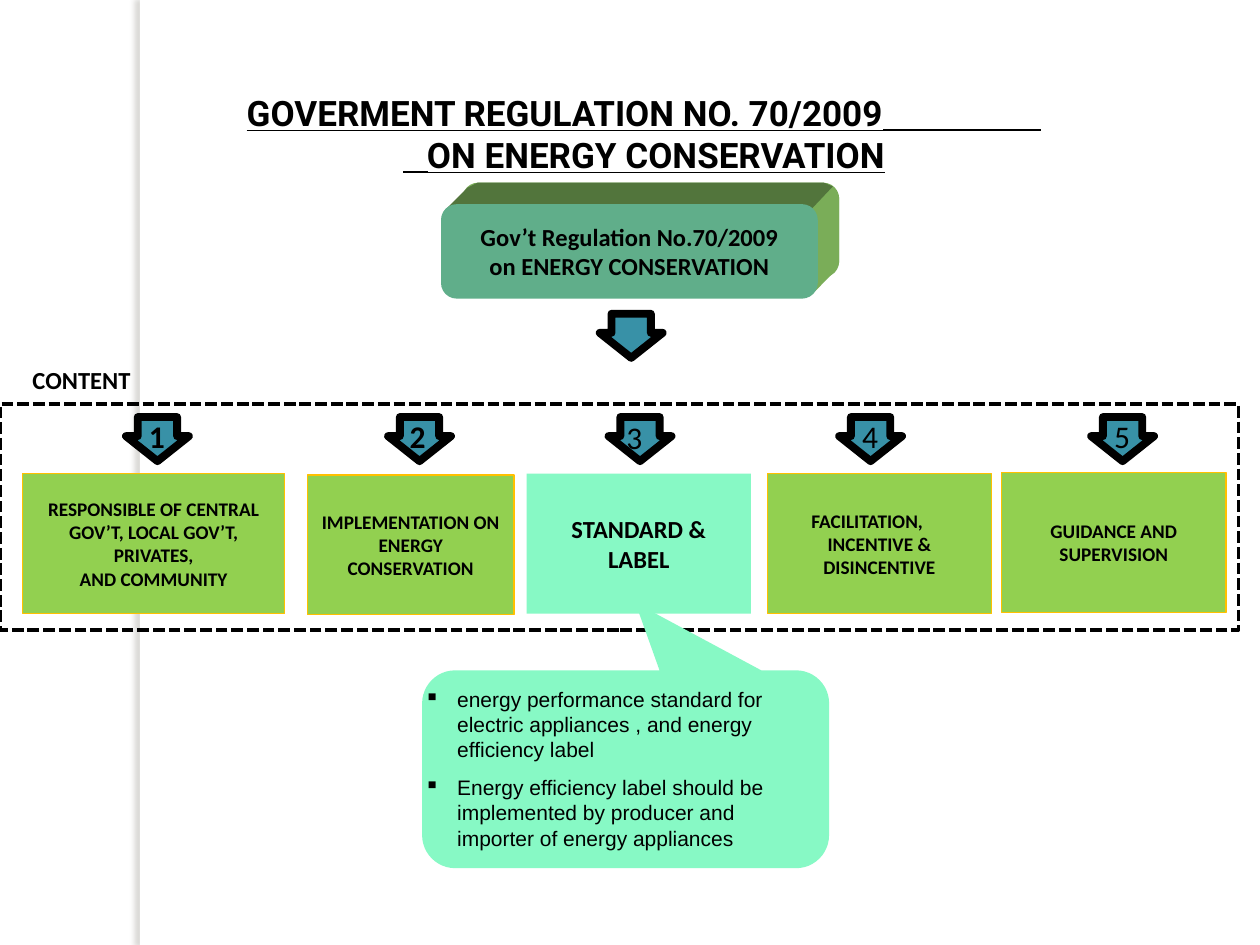
"""Build the slide on the government regulation for energy conservation."""
from lxml import etree
from pptx import Presentation
from pptx.dml.color import RGBColor
from pptx.enum.dml import MSO_LINE
from pptx.enum.shapes import MSO_CONNECTOR, MSO_SHAPE
from pptx.enum.text import MSO_ANCHOR, PP_ALIGN
from pptx.oxml import parse_xml
from pptx.oxml.ns import nsdecls, qn
from pptx.util import Inches, Pt

RECT, ARROW = MSO_SHAPE.RECTANGLE, MSO_SHAPE.DOWN_ARROW
ROUNDED = MSO_SHAPE.FLOWCHART_ALTERNATE_PROCESS
CALLOUT = MSO_SHAPE.ROUNDED_RECTANGULAR_CALLOUT
STRAIGHT = MSO_CONNECTOR.STRAIGHT
TOP, MIDDLE = MSO_ANCHOR.TOP, MSO_ANCHOR.MIDDLE
LEFT, CENTER = PP_ALIGN.LEFT, PP_ALIGN.CENTER
DOTTED = MSO_LINE.SQUARE_DOT
COLORS = {"white": "FFFFFF", "black": "000000", "teal": "3891A7", "green": "92D050",
          "amber": "FFC000", "mint": "87F9C5", "front": "60AE8A",
          "side": "7AAD58", "top": "52753C", "shade": "736F63"}

prs = Presentation()
prs.slide_width, prs.slide_height = Inches(10), Inches(7.5)
COL, ROW = prs.slide_width / 100, prs.slide_height / 75
slide = prs.slides.add_slide(prs.slide_layouts[6])


def paint(shape, fill=None, line=None, weight=0.75):
    shape.shadow.inherit = False
    if fill:
        shape.fill.solid()
        shape.fill.fore_color.rgb = RGBColor.from_string(COLORS[fill])
    else:
        shape.fill.background()
    if line:
        shape.line.color.rgb = RGBColor.from_string(COLORS[line])
        shape.line.width = Pt(weight)
    else:
        shape.line.fill.background()
    return shape


def write(shape, lines, size, bold=True, font="Calibri", inset=0.07,
          anchor=MIDDLE, wrap=True, align=CENTER, underline=None):
    frame = shape.text_frame
    margins = dict.fromkeys(("margin_left", "margin_right"), Inches(inset))
    layout = {"word_wrap": wrap, "vertical_anchor": anchor, **margins}
    for key, value in layout.items():
        setattr(frame, key, value)
    for number, (text, indent) in enumerate(lines):
        paragraph = frame.paragraphs[0] if number == 0 else frame.add_paragraph()
        paragraph.alignment = LEFT if indent else align
        if indent:
            paragraph._p.get_or_add_pPr().set("marL", str(Inches(indent)))
        run = paragraph.add_run()
        run.text = text
        look = {"size": Pt(size), "bold": bold, "name": font, "underline": underline}
        for key, value in look.items():
            setattr(run.font, key, value)
        run.font.color.rgb = RGBColor.from_string(COLORS["black"])
    return frame


def_place = [(11.1, 0, 0.8, 75)]
for left, top, width, height in def_place:
    margin_strip = paint(slide.shapes.add_shape(
        RECT, int(left * COL), int(top * ROW), int(width * COL), int(height * ROW)), "white")
effects = margin_strip._element.spPr.find(qn("a:effectLst"))
effects.append(parse_xml(
    f'<a:outerShdw {nsdecls("a")} blurRad="{Pt(3)}" dist="{Pt(3)}" dir="10800000">'
    f'<a:srgbClr val="{COLORS["shade"]}"><a:alpha val="25000"/></a:srgbClr></a:outerShdw>'))

for left, top in [(10, 33.1), (30.8, 33.1), (48.3, 33.1), (66.6, 33.1), (86.6, 33.1), (47.6, 24.9)]:
    arrow = paint(slide.shapes.add_shape(
        ARROW, int(left * COL), int(top * ROW), int(5 * COL), int(3.5 * ROW)),
        "teal", "black", 4.5)
    arrow.adjustments[0], arrow.adjustments[1] = 0.625, 0.566

content_frame = paint(slide.shapes.add_shape(
    RECT, 0, int(32.1 * ROW), int(98.3 * COL), int(17.9 * ROW)), None, "black", 2.25)
content_frame.line.dash_style = DOTTED

topics = [
    (1.8, 37.6, 20.8, "green", "amber", 11,
     [("RESPONSIBLE OF CENTRAL GOV’T, LOCAL GOV’T, PRIVATES,", 0), ("AND COMMUNITY", 0)]),
    (24.4, 37.7, 16.4, "green", "amber", 11, [("IMPLEMENTATION ON ENERGY CONSERVATION", 0)]),
    (41.8, 37.6, 17.8, "mint", None, 14, [("STANDARD &", 0), ("LABEL", 0)]),
    (60.9, 37.6, 17.8, "green", "amber", 11,
     [("FACILITATION,", 0.28), ("INCENTIVE &", 0), ("DISINCENTIVE", 0)]),
    (79.5, 37.5, 17.8, "green", "amber", 11, [("GUIDANCE AND SUPERVISION", 0)]),
]
for left, top, width, fill, line, size, lines in topics:
    topic = paint(slide.shapes.add_shape(
        RECT, int(left * COL), int(top * ROW), int(width * COL), int(11.1 * ROW)), fill, line)
    write(topic, lines, size)

for number, (left, top) in enumerate(
        [(10.8, 32.6), (31.5, 32.6), (48.7, 32.7), (67.4, 32.6), (87.4, 32.6)], 1):
    numeral = slide.shapes.add_textbox(
        int(left * COL), int(top * ROW), int(3.3 * COL), int(4 * ROW))
    write(numeral, [(str(number), 0)], 18, number < 3, inset=0.1, anchor=TOP, wrap=False)

content_label = slide.shapes.add_textbox(
    int(1.6 * COL), int(28.5 * ROW), int(13.3 * COL), int(3.3 * ROW))
write(content_label, [("CONTENT", 0)], 14, inset=0.1, anchor=TOP, align=LEFT)

callout = paint(slide.shapes.add_shape(
    CALLOUT, int(33.5 * COL), int(53.2 * ROW), int(32.3 * COL), int(15.7 * ROW)), "mint")
callout.rotation = 180
for index, value in enumerate((-0.024, 0.842, 0.167)):
    callout.adjustments[index] = value

label_rules = slide.shapes.add_textbox(
    int(32.7 * COL), int(54 * ROW), int(31.5 * COL), int(14.3 * ROW))
rules = write(label_rules, [
    ("energy performance standard for electric appliances , and energy efficiency label", 0.26),
    ("Energy efficiency label should be implemented by producer and importer of energy appliances",
     0.26)], 12, False, "Arial", 0.1, TOP)
for rule in rules.paragraphs:
    rule.space_after = Pt(7.2)
    properties = rule._p.get_or_add_pPr()
    properties.set("indent", str(Inches(-0.26)))
    etree.SubElement(properties, qn("a:buChar")).set("char", "▪")

paint(slide.shapes.add_shape(
    ROUNDED, int(36.7 * COL), int(14.5 * ROW), int(29.9 * COL), int(7.5 * ROW)), "side")
facets = [
    ("side", [(64.5, 16.6), (66.2, 14.9), (66.6, 15.7), (66.6, 20.8), (66.2, 21.6), (64.5, 23.3)]),
    ("top", [(35.4, 16.6), (37.1, 14.9), (37.9, 14.5), (65.4, 14.5), (66.1, 14.8), (64.4, 16.6)]),
]
for fill, corners in facets:
    points = [(int(x * COL), int(y * ROW)) for x, y in corners]
    outline = slide.shapes.build_freeform(*points[0])
    outline.add_line_segments(points[1:], close=True)
    paint(outline.convert_to_shape(), fill)
regulation = paint(slide.shapes.add_shape(
    ROUNDED, int(35 * COL), int(16.2 * ROW), int(29.9 * COL), int(7.5 * ROW)), "front")
write(regulation, [("Gov’t Regulation No.70/2009", 0), ("on ENERGY CONSERVATION", 0)],
      14, inset=0.1, wrap=False)

title = slide.shapes.add_textbox(
    int(18.5 * COL), int(6.8 * ROW), int(65.3 * COL), int(4.8 * ROW))
write(title, [("GOVERMENT REGULATION NO. 70/2009", 0.01), ("ON ENERGY CONSERVATION", 1.44)],
      20, font="Roboto", inset=0.1, anchor=TOP, underline=True)
for start, end, height in [(70.1, 82.6, 10.3), (32, 34, 13.65)]:
    underline = slide.shapes.add_connector(
        STRAIGHT, int(start * COL), int(height * ROW), int(end * COL), int(height * ROW))
    underline.line.color.rgb = RGBColor.from_string(COLORS["black"])
    underline.line.width = Pt(1.25)
    etree.SubElement(underline._element.spPr, qn("a:effectLst"))

prs.save("out.pptx")
